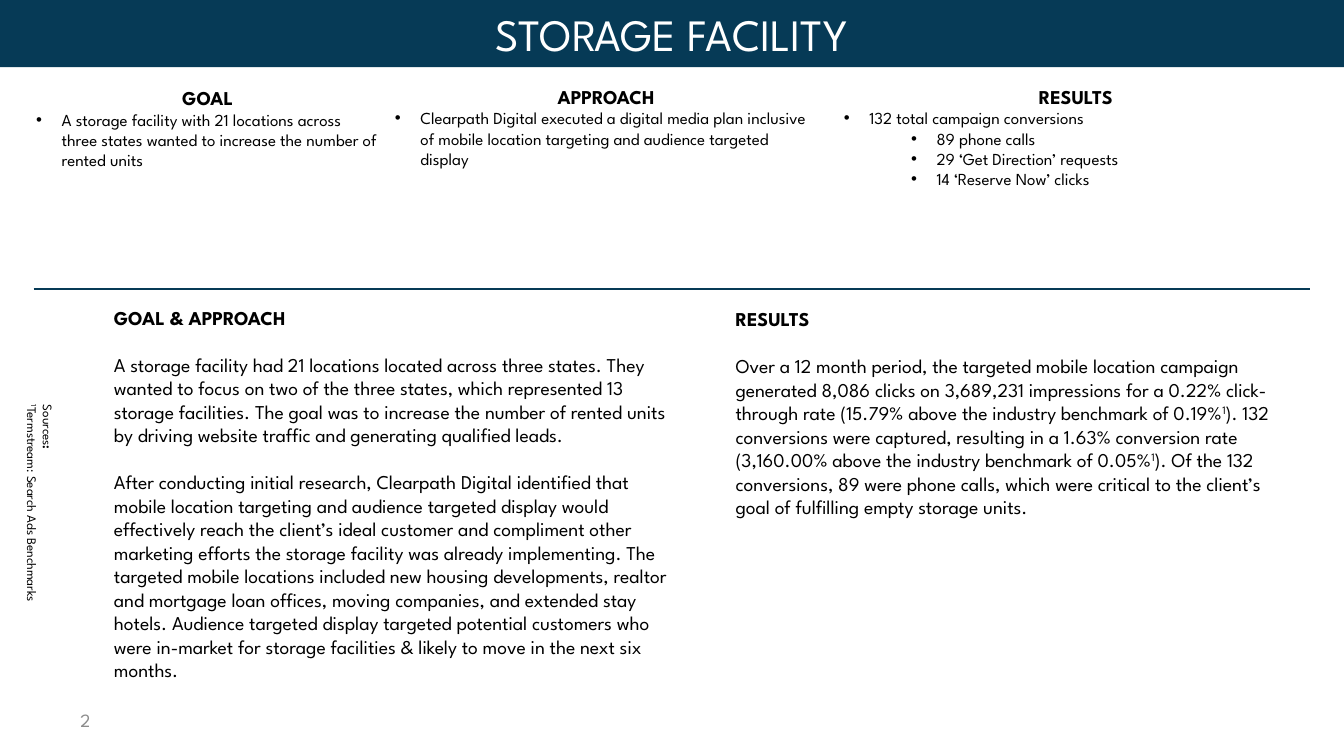
from dataclasses import dataclass

from lxml.etree import SubElement
from pptx import Presentation
from pptx.dml.color import RGBColor
from pptx.enum.shapes import MSO_CONNECTOR as Link, MSO_SHAPE as Form
from pptx.enum.text import MSO_ANCHOR as Anchor, PP_ALIGN as Align
from pptx.oxml.ns import qn
from pptx.util import Pt

PX = 4572  # 200 px to the inch
FONT = "League Spartan"
NAVY, BLACK, WHITE, GREY = "063A56", "000000", "FFFFFF", "8C8C8C"
INDENT, STEP = 38, 100


@dataclass
class Run:
    text: str
    bold: bool = False
    sup: bool = False


@dataclass
class Para:
    runs: list[Run]
    size: float
    color: str = BLACK
    align: Align = Align.LEFT
    level: int | None = None  # bullet level, None for no bullet
    gap: float = 0


@dataclass
class Box:
    left: int
    top: int
    width: int
    height: int
    paras: list[Para]
    wrap: bool = True
    turn: int = 0
    anchor: Anchor = Anchor.TOP


def rgb(code: str) -> RGBColor:
    return RGBColor.from_string(code)


def head(text: str, align: Align = Align.LEFT) -> Para:
    return Para([Run(text, bold=True)], 10.5, align=align)


def body(*runs: Run) -> Para:
    return Para(list(runs), 10.5, gap=12.6)


def point(text: str, level: int = 0) -> Para:
    return Para([Run(text)], 9, level=level)


def write(frame, paras: list[Para]) -> None:
    for i, item in enumerate(paras):
        para = frame.paragraphs[0] if i == 0 else frame.add_paragraph()
        para.alignment = item.align
        para.space_before = Pt(item.gap)
        if item.level is not None:
            para.level = item.level
            props = para._p.get_or_add_pPr()
            props.set("marL", str((INDENT + STEP * item.level) * PX))
            props.set("indent", str(-INDENT * PX))
            SubElement(props, qn("a:buFont")).set("typeface", "Arial")
            SubElement(props, qn("a:buChar")).set("char", "•")
        for part in item.runs:
            run = para.add_run()
            run.text = part.text
            run.font.name = FONT
            run.font.size = Pt(item.size)
            run.font.bold = part.bold
            run.font.color.rgb = rgb(item.color)
            if part.sup:
                run._r.get_or_add_rPr().set("baseline", "30000")


def add_box(slide, box: Box) -> None:
    shape = slide.shapes.add_textbox(
        box.left * PX, box.top * PX, box.width * PX, box.height * PX)
    shape.rotation = box.turn
    shape.text_frame.word_wrap = box.wrap
    shape.text_frame.vertical_anchor = box.anchor
    write(shape.text_frame, box.paras)


def add_banner(slide, text: str) -> None:
    bar = slide.shapes.add_shape(Form.RECTANGLE, 0, 0, 2000 * PX, 100 * PX)
    bar.shadow.inherit = False
    bar.fill.solid()
    bar.fill.fore_color.rgb = rgb(NAVY)
    bar.line.fill.background()
    bar.text_frame.word_wrap = True
    write(bar.text_frame, [Para([Run(text)], 24, WHITE, Align.CENTER)])


def add_rule(slide, left: int, right: int, y: int) -> None:
    rule = slide.shapes.add_connector(
        Link.STRAIGHT, left * PX, y * PX, right * PX, y * PX)
    rule.line.color.rgb = rgb(NAVY)
    rule.line.width = Pt(1.5)
    SubElement(rule._element.spPr, qn("a:effectLst"))


NOTE = Run("1", sup=True)

BOXES = [
    Box(100, 1042, 466, 60, [Para([Run("2")], 10, GREY)], anchor=Anchor.MIDDLE),
    Box(34, 118, 550, 146, [
        head("GOAL", Align.CENTER),
        point("A storage facility with 21 locations across three states wanted "
              "to increase the number of rented units"),
    ]),
    Box(568, 116, 668, 146, [
        head("APPROACH", Align.CENTER),
        point("Clearpath Digital executed a digital media plan inclusive of "
              "mobile location targeting and audience targeted display"),
    ]),
    Box(1236, 116, 730, 176, [
        head("RESULTS", Align.CENTER),
        point("132 total campaign conversions"),
        point("89 phone calls", 1),
        point("29 ‘Get Direction’ requests", 1),
        point("14 ‘Reserve Now’ clicks", 1),
    ]),
    Box(150, 445, 874, 656, [
        head("GOAL & APPROACH"),
        body(Run(
            "A storage facility had 21 locations located across three states. "
            "They wanted to focus on two of the three states, which represented "
            "13 storage facilities. The goal was to increase the number of "
            "rented units by driving website traffic and generating qualified "
            "leads.")),
        body(Run(
            "After conducting initial research, Clearpath Digital identified "
            "that mobile location targeting and audience targeted display would "
            "effectively reach the client’s ideal customer and compliment other "
            "marketing efforts the storage facility was already implementing. "
            "The targeted mobile locations included new housing developments, "
            "realtor and mortgage loan offices, moving companies, and extended "
            "stay hotels. Audience targeted display targeted potential customers "
            "who were in-market for storage facilities & likely to move in the "
            "next six months.")),
    ]),
    Box(1075, 447, 874, 374, [
        head("RESULTS"),
        body(
            Run("Over a 12 month period, the targeted mobile location campaign "
                "generated 8,086 clicks on 3,689,231 impressions for a 0.22% "
                "click-through rate (15.79% above the industry benchmark of "
                "0.19%"),
            NOTE,
            Run("). 132 conversions were captured, resulting in a 1.63% "
                "conversion rate (3,160.00% above the industry benchmark of "
                "0.05%"),
            NOTE,
            Run("). Of the 132 conversions, 89 were phone calls, which were "
                "critical to the client’s goal of fulfilling empty storage "
                "units.")),
    ]),
    Box(-146, 754, 410, 68, [
        Para([Run("Sources"), Run(":", bold=True)], 7),
        Para([NOTE, Run("Termstream: Search Ads Benchmarks")], 7),
    ], wrap=False, turn=90),
]


def main() -> None:
    deck = Presentation()
    deck.slide_width, deck.slide_height = 2000 * PX, 1125 * PX
    slide = deck.slides.add_slide(deck.slide_layouts[6])
    for box in BOXES:
        add_box(slide, box)
    add_banner(slide, "STORAGE FACILITY")
    add_rule(slide, 50, 1950, 430)
    deck.save("out.pptx")


if __name__ == "__main__":
    main()
